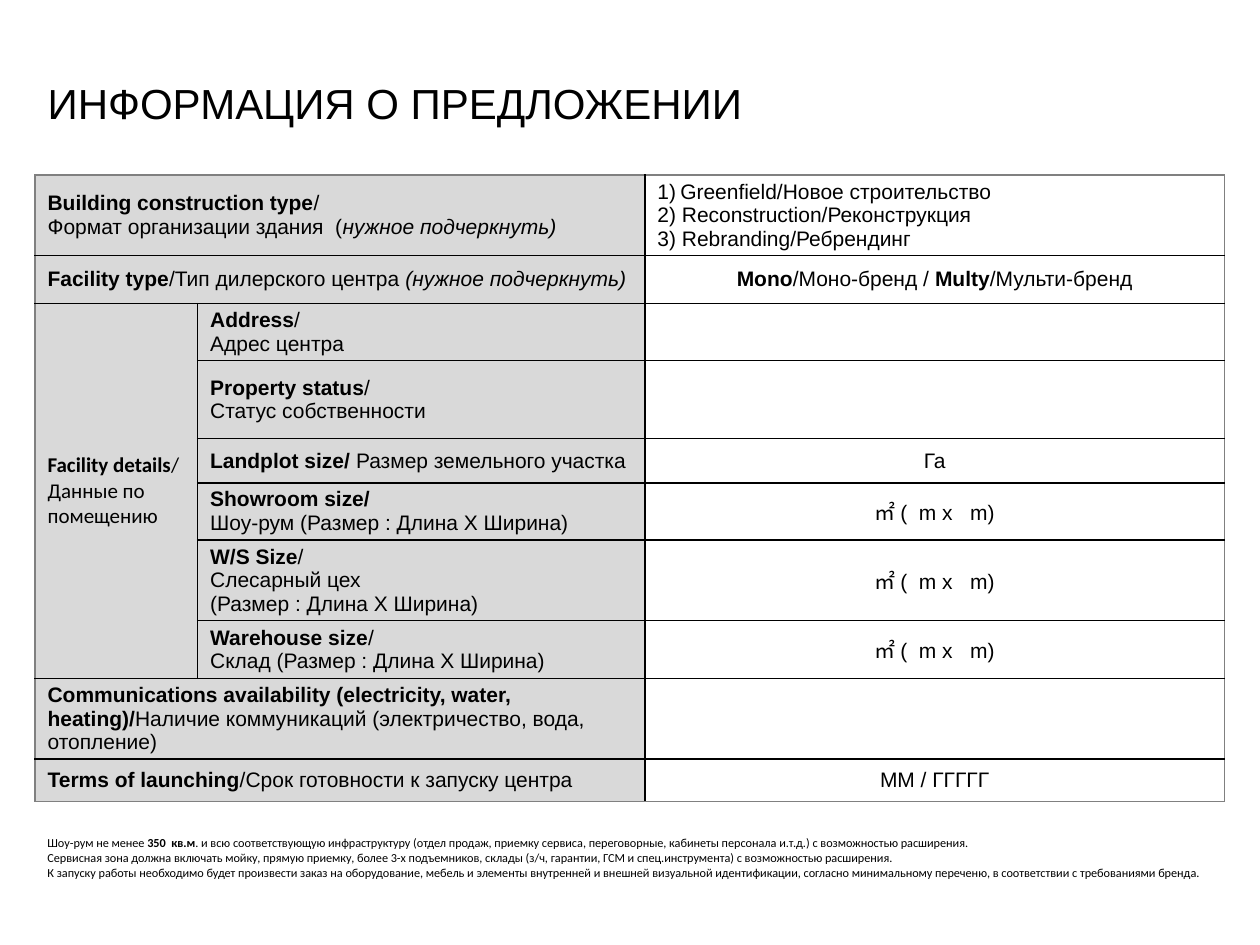
"""Build the offer information slide with its facility table and footnotes."""
from dataclasses import dataclass

from lxml import etree
from pptx import Presentation
from pptx import util as u
from pptx.dml import color
from pptx.enum import text
from pptx.oxml import ns


@dataclass(frozen=True)
class Theme:
    ink: str = "000000"
    edge: str = "808080"
    label: str = "D9D9D9"
    blank: str = "FFFFFF"
    font: str = "Arial"
    alt: str = "Calibri"
    head: float = 24
    body: float = 12
    note: float = 7


THEME = Theme()
COLS = [92.9, 255.6, 331.2]
ROWS = [38.2, 27.4, 27.4, 44.6, 25.2, 32.4, 38.2, 33.1, 38.2, 24.5]
WIDE = [0, 1, 8, 9]
AREA = "㎡ (  m x   m)"

LABELS = [
    ["*Building construction type*/", "Формат организации здания  (_нужное подчеркнуть)_"],
    ["*Facility type*/Тип дилерского центра _(нужное подчеркнуть)_"],
    ["*Address*/", "Адрес центра"],
    ["*Property status*/", "Статус собственности"],
    ["*Landplot size/ *Размер земельного участка"],
    ["*Showroom size/*", "Шоу-рум (Размер : Длина Х Ширина)"],
    ["*W/S Size*/", "Слесарный цех\n(Размер : Длина Х Ширина)"],
    ["*Warehouse size*/", "Склад (Размер : Длина Х Ширина)"],
    ["*Communications availability (electricity, water, heating)/*"
     "Наличие коммуникаций (электричество, вода, отопление)"],
    ["*Terms of launching*/Срок готовности к запуску центра"],
]
GROUP = ["*Facility details*/", "Данные по помещению"]
TYPES = ["Greenfield/Новое строительство", "2) Reconstruction/Реконструкция",
         "3) Rebranding/Ребрендинг"]
VALUES = {1: "*Mono*/Моно-бренд / *Multy*/Мульти-бренд", 4: "Га",
          5: AREA, 6: AREA, 7: AREA, 9: "ММ / ГГГГГ"}
NOTES = [
    "Шоу-рум не менее *350  кв.м*. и всю соответствующую инфраструктуру (отдел продаж, "
    "приемку сервиса, переговорные, кабинеты персонала и.т.д.) с возможностью расширения.",
    "Сервисная зона должна включать мойку, прямую приемку, более 3-х подъемников, склады "
    "(з/ч, гарантии, ГСМ и спец.инструмента) с возможностью расширения.",
    "К запуску работы необходимо будет произвести заказ на оборудование, мебель и элементы "
    "внутренней и внешней визуальной идентификации, согласно минимальному переченю, "
    "в соответствии с требованиями бренда.",
]


def put(item, vals):
    """Set each attribute of an object from a dict."""
    for name, val in vals.items():
        setattr(item, name, val)


def place(shape, *box):
    """Set left, top, width and height in points."""
    put(shape, dict(zip(("left", "top", "width", "height"), map(u.Pt, box))))


def add_run(para, words, look):
    """Add one run, with a line break at each newline."""
    for num, part in enumerate(words.split("\n")):
        if num:
            para.add_line_break()
        run = para.add_run()
        run.text = part
        put(run.font, look)
        run.font.color.rgb = color.RGBColor.from_string(THEME.ink)


def write(frame, lines, size, font=THEME.font, align=text.PP_ALIGN.LEFT):
    """Fill a frame with lines where *stars* are bold and _bars_ italic."""
    for num, line in enumerate(lines):
        para = frame.add_paragraph() if num else frame.paragraphs[0]
        para.alignment = align
        for bold, chunk in enumerate(line.split("*")):
            for slant, words in enumerate(chunk.split("_")):
                if words:
                    add_run(para, words, {"name": font, "size": u.Pt(size),
                                          "bold": bold % 2 == 1,
                                          "italic": slant % 2 == 1})


def hang(frame):
    """Hang the lines of a frame and number the first one."""
    for para in frame.paragraphs:
        prop = para._p.get_or_add_pPr()
        prop.set("marL", str(u.Pt(13)))
        prop.set("indent", str(u.Pt(-13)))
    mark = etree.SubElement(frame.paragraphs[0]._p.pPr, ns.qn("a:buAutoNum"))
    mark.set("type", "arabicParenR")


def rule(cell, side, outer):
    """Draw one cell border, grey on the table's outer edge."""
    width, tint = (0.75, THEME.edge) if outer else (1, THEME.ink)
    line = etree.SubElement(cell._tc.get_or_add_tcPr(), ns.qn("a:ln" + side))
    line.set("w", str(u.Pt(width)))
    fill = etree.SubElement(line, ns.qn("a:solidFill"))
    etree.SubElement(fill, ns.qn("a:srgbClr")).set("val", tint)


def style(cell, row, col):
    """Set the borders, fill and margins of a cell."""
    last = row == len(ROWS) - 1
    for side, outer in (("L", col == 0), ("R", col == 2), ("T", row == 0), ("B", last)):
        rule(cell, side, outer)
    cell.fill.solid()
    tint = THEME.blank if col == 2 else THEME.label
    cell.fill.fore_color.rgb = color.RGBColor.from_string(tint)
    put(cell, {"margin_left": u.Pt(7.2), "margin_right": u.Pt(7.2),
               "margin_top": u.Pt(2.88), "margin_bottom": u.Pt(2.88),
               "vertical_anchor": text.MSO_ANCHOR.MIDDLE})


def add_grid(slide):
    """Add the table of facility details."""
    box = map(u.Pt, (20, 100, sum(COLS), sum(ROWS)))
    grid = slide.shapes.add_table(len(ROWS), len(COLS), *box).table
    put(grid, {"first_row": False, "horz_banding": False})
    for col, width in zip(grid.columns, COLS):
        col.width = u.Pt(width)
    for row, height in zip(grid.rows, ROWS):
        row.height = u.Pt(height)
    for row in WIDE:
        grid.cell(row, 0).merge(grid.cell(row, 1))
    grid.cell(2, 0).merge(grid.cell(7, 0))
    for row in range(len(ROWS)):
        for col in range(len(COLS)):
            if not grid.cell(row, col).is_spanned:
                style(grid.cell(row, col), row, col)
    for row, lines in enumerate(LABELS):
        write(grid.cell(row, 0 if row in WIDE else 1).text_frame, lines, THEME.body)
    write(grid.cell(2, 0).text_frame, GROUP, THEME.body, THEME.alt)
    types = grid.cell(0, 2).text_frame
    write(types, TYPES, THEME.body)
    hang(types)
    for row, line in VALUES.items():
        write(grid.cell(row, 2).text_frame, [line], THEME.body,
              align=text.PP_ALIGN.CENTER)


def add_title(slide):
    """Fill and place the title."""
    title = slide.shapes.title
    place(title, 20, 39, 556, 39)
    put(title.text_frame, {"vertical_anchor": text.MSO_ANCHOR.MIDDLE,
                           "auto_size": text.MSO_AUTO_SIZE.NONE})
    write(title.text_frame, ["ИНФОРМАЦИЯ О ПРЕДЛОЖЕНИИ"], THEME.head)


def add_notes(slide):
    """Add the small print below the table."""
    box = slide.shapes.add_textbox(*map(u.Pt, (20, 474, 686, 32.4)))
    put(box.text_frame, {"word_wrap": True,
                         "auto_size": text.MSO_AUTO_SIZE.SHAPE_TO_FIT_TEXT})
    write(box.text_frame, NOTES, THEME.note, THEME.alt)


def main():
    """Build and save the slide."""
    deck = Presentation()
    put(deck, {"slide_width": u.Pt(720), "slide_height": u.Pt(540)})
    slide = deck.slides.add_slide(deck.slide_layouts[5])
    add_title(slide)
    add_grid(slide)
    add_notes(slide)
    deck.save("out.pptx")


if __name__ == "__main__":
    main()
